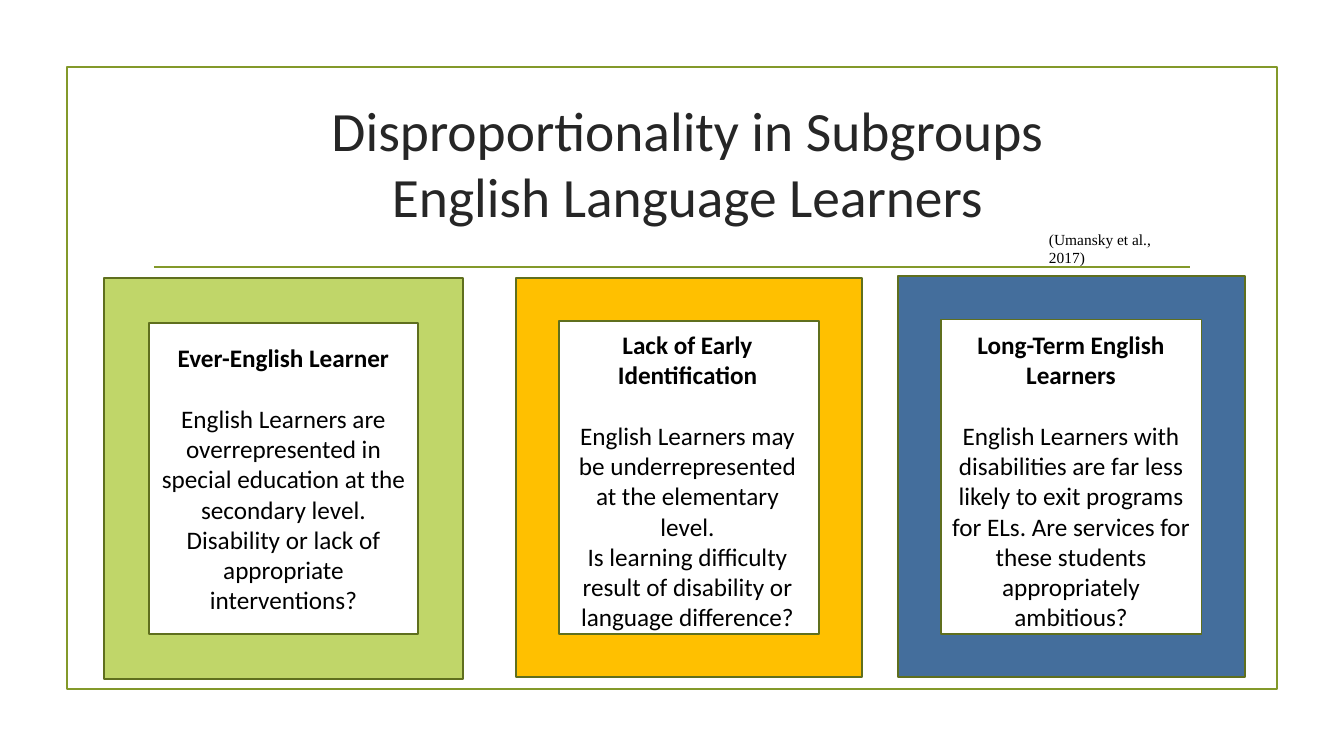
from lxml.etree import SubElement
from pptx import Presentation
from pptx.dml.color import RGBColor
from pptx.enum.shapes import MSO_CONNECTOR as CONN, MSO_SHAPE as SHAPE
from pptx.enum.text import MSO_ANCHOR as ANCHOR, MSO_AUTO_SIZE as FIT, PP_ALIGN as ALIGN
from pptx.oxml.ns import qn
from pptx.util import Emu, Pt

# Content: lengths in px
SCALE = 914400 / 100.8
SLIDE = (1344, 756)
GREEN, EDGE, BLACK, DARK = "83992A", "5F6F1E", "000000", "262626"

TITLE = ["Disproportionality in Subgroups", "English Language Learners"]
TITLE_BOX = (108, 92, 1159, 146)
CITATION = "(Umansky et al., 2017)"
CITATION_BOX = (1039, 220, 161, 39)
BORDER = (67, 67, 1210, 622)
RULE = (154, 267, 1190, 267)

# Frame box, fill, text box (None: text sits in the frame), heading, body
CARDS = [
    ((104, 278, 359, 401), "C0D669", None, "Ever-English Learner",
     ["English Learners are overrepresented in special education at the secondary level.",
      "Disability or lack of appropriate interventions?"]),
    ((516, 278, 346, 399), "FFC000", (561, 324, 253, 316), "Lack of Early Identification",
     ["English Learners may be underrepresented at the elementary level.",
      "Is learning difficulty result of disability or language difference?"]),
    ((898, 276, 347, 401), "446E9C", (942, 324, 258, 316), "Long-Term English Learners",
     ["English Learners with disabilities are far less likely to exit programs for ELs. "
      "Are services for these students appropriately ambitious?"]),
]


def px(*lengths):
    return [Emu(round(n * SCALE)) for n in lengths]


def rgb(color):
    return RGBColor.from_string(color)


def add_outlined(shape, box, line, fill=None):
    sp = slide.shapes.add_shape(shape, *px(*box))
    sp.shadow.inherit = False
    sp.line.color.rgb = rgb(line)
    sp.line.width = Pt(1.25)
    if fill:
        sp.fill.solid()
        sp.fill.fore_color.rgb = rgb(fill)
    else:
        sp.fill.background()
    return sp


def set_frame(tf, inset, anchor, fit=FIT.NONE):
    tf.word_wrap = True
    tf.auto_size = fit
    tf.vertical_anchor = anchor
    tf.margin_left = tf.margin_right = px(10)[0]
    tf.margin_top = tf.margin_bottom = px(inset)[0]


def add_run(p, text, size, color=BLACK, font="Calibri", bold=False):
    r = p.add_run()
    r.text = text
    r.font.size = Pt(size)
    r.font.name = font
    r.font.bold = bold
    r.font.color.rgb = rgb(color)


def fill_card(tf, heading, body):
    p = tf.paragraphs[0]
    p.alignment = ALIGN.CENTER
    p.space_after = Pt(22)
    add_run(p, heading, 18, bold=True)
    for text in body:
        p = tf.add_paragraph()
        p.alignment = ALIGN.CENTER
        add_run(p, text, 18)


prs = Presentation()
prs.slide_width, prs.slide_height = px(*SLIDE)
slide = prs.slides.add_slide(prs.slide_layouts[5])

# Border and rule
add_outlined(SHAPE.RECTANGLE, BORDER, GREEN)
rule = slide.shapes.add_connector(CONN.STRAIGHT, *px(*RULE))
rule.line.color.rgb = rgb(GREEN)
rule.line.width = Pt(1.25)
SubElement(rule._element.spPr, qn("a:effectLst"))

# Cards
for box, fill, text_box, heading, body in CARDS:
    sp = add_outlined(SHAPE.FRAME, box, EDGE, fill)
    sp.adjustments[0] = 0.125
    if text_box:
        tf = slide.shapes.add_textbox(*px(*text_box)).text_frame
        set_frame(tf, 5, ANCHOR.TOP, FIT.SHAPE_TO_FIT_TEXT)
    else:
        tf = sp.text_frame
        set_frame(tf, 5, ANCHOR.MIDDLE)
    fill_card(tf, heading, body)

# Title
title = slide.shapes.title
title.left, title.top, title.width, title.height = px(*TITLE_BOX)
set_frame(title.text_frame, 5, ANCHOR.MIDDLE)
p = title.text_frame.paragraphs[0]
p.alignment = ALIGN.CENTER
p.line_spacing = 0.98
for i, line in enumerate(TITLE):
    if i:
        p.add_line_break()
    add_run(p, line, 39.6, DARK)

# Citation
tf = slide.shapes.add_textbox(*px(*CITATION_BOX)).text_frame
set_frame(tf, 10, ANCHOR.TOP, FIT.SHAPE_TO_FIT_TEXT)
add_run(tf.paragraphs[0], CITATION, 11, font="Times New Roman")

prs.save("out.pptx")
